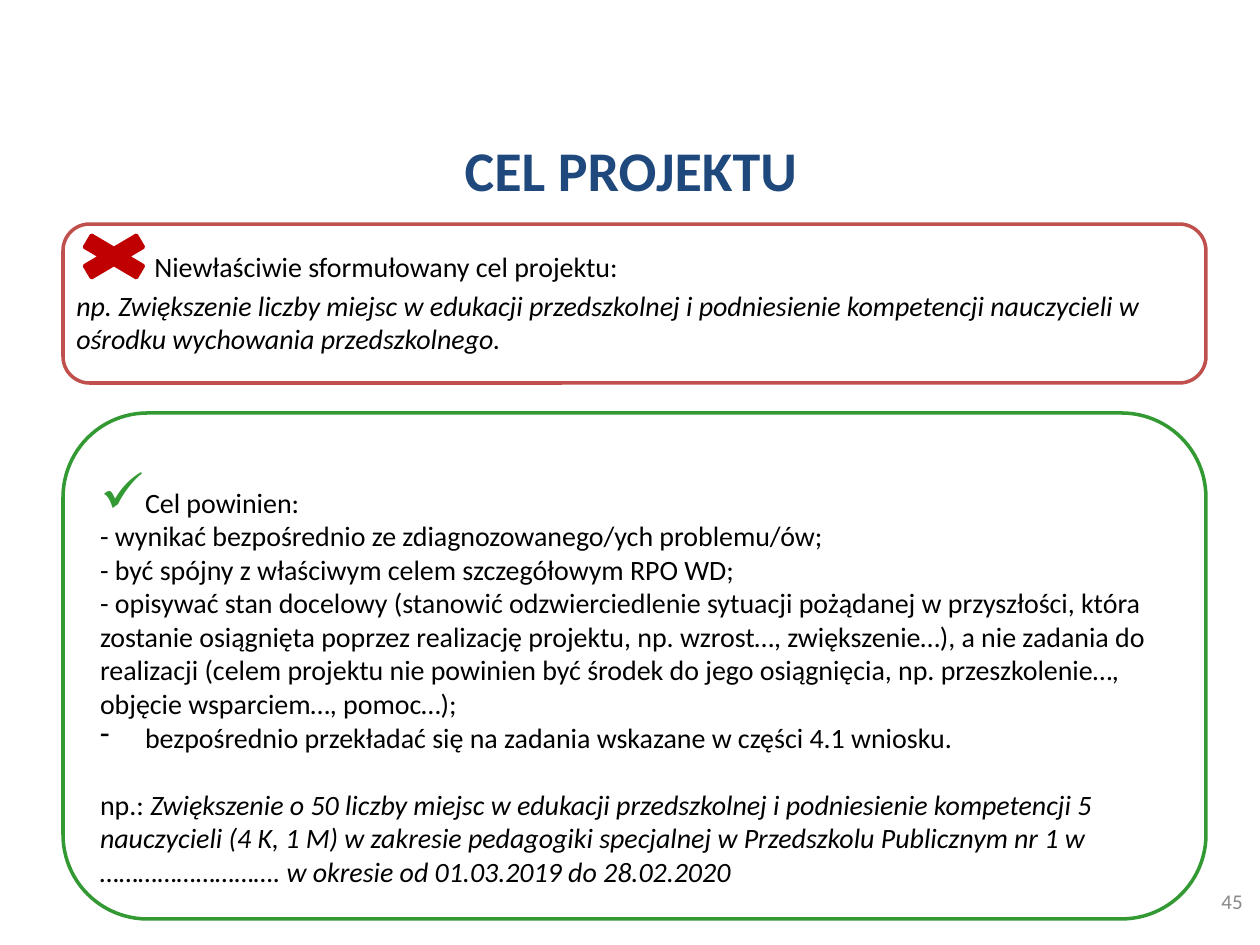
from lxml import etree
from pptx import Presentation
from pptx.dml.color import RGBColor
from pptx.enum.shapes import MSO_SHAPE
from pptx.enum.text import MSO_ANCHOR, PP_ALIGN
from pptx.oxml.ns import qn
from pptx.util import Pt

ROUND, CROSS = MSO_SHAPE.ROUNDED_RECTANGLE, MSO_SHAPE.MATH_MULTIPLY
TOP, MID, LOW = MSO_ANCHOR.TOP, MSO_ANCHOR.MIDDLE, MSO_ANCHOR.BOTTOM
LEFT, MIDST, RIGHT = PP_ALIGN.LEFT, PP_ALIGN.CENTER, PP_ALIGN.RIGHT
NAVY = RGBColor(0x1F, 0x49, 0x7D)
BLACK = RGBColor(0, 0, 0)
GREY = RGBColor(0x89, 0x89, 0x89)
ROSE = RGBColor(0xC0, 0x50, 0x4D)
RED = RGBColor(0xC0, 0, 0)
GREEN = RGBColor(0x33, 0x99, 0x33)
FONT = "Calibri"
WIDE, HIGH = 1260, 945

AIMS = [
    "- wynikać bezpośrednio ze zdiagnozowanego/ych problemu/ów;",
    "- być spójny z właściwym celem szczegółowym RPO WD;",
    "- opisywać stan docelowy (stanowić odzwierciedlenie sytuacji pożądanej w "
    "przyszłości, która zostanie osiągnięta poprzez realizację projektu, np. "
    "wzrost…, zwiększenie…), a nie zadania do realizacji (celem projektu nie "
    "powinien być środek do jego osiągnięcia, np. przeszkolenie…, objęcie "
    "wsparciem…, pomoc…);",
]
CASE = (
    "Zwiększenie o 50 liczby miejsc w edukacji przedszkolnej i podniesienie "
    "kompetencji 5 nauczycieli (4 K, 1 M) w zakresie pedagogiki specjalnej w "
    "Przedszkolu Publicznym nr 1 w ………………………. w okresie od 01.03.2019 do "
    "28.02.2020"
)
WRONG = (
    "np. Zwiększenie liczby miejsc w edukacji przedszkolnej i podniesienie "
    "kompetencji nauczycieli w ośrodku wychowania przedszkolnego."
)


def px(n):
    return round(n * 914400 / 126)


def add_shape(slide, kind, box, line, fill=None):
    shape = slide.shapes.add_shape(kind, *map(px, box))
    shape.shadow.inherit = False
    if fill is None:
        shape.fill.background()
    else:
        shape.fill.solid()
        shape.fill.fore_color.rgb = fill
    shape.line.color.rgb = line
    shape.line.width = Pt(2)
    return shape


def set_frame(shape, anchor):
    frame = shape.text_frame
    frame.word_wrap = True
    frame.vertical_anchor = anchor
    return frame


def add_box(slide, box, anchor):
    return set_frame(slide.shapes.add_textbox(*map(px, box)), anchor)


def add_run(para, text, size=16, tint=BLACK, bold=False, slant=False):
    run = para.add_run()
    run.text = text
    font = run.font
    font.name, font.size = FONT, Pt(size)
    font.bold, font.italic = bold, slant
    font.color.rgb = tint


def add_para(frame, align=LEFT, gap=0):
    first = frame.paragraphs[0]
    para = frame.add_paragraph() if first.runs else first
    para.alignment = align
    if gap:
        para.space_before = Pt(gap)
    return para


def set_mark(para, char, tint=None, scale=None):
    props = para._p.get_or_add_pPr()
    props.set("marL", str(px(45)))
    props.set("indent", str(-px(45)))
    if tint is not None:
        hue = etree.SubElement(props, qn("a:buClr"))
        etree.SubElement(hue, qn("a:srgbClr")).set("val", str(tint))
    if scale:
        etree.SubElement(props, qn("a:buSzPct")).set("val", str(scale * 1000))
    etree.SubElement(props, qn("a:buChar")).set("char", char)


def add_title(slide, box):
    para = add_para(add_box(slide, box, MID), MIDST)
    add_run(para, "CEL PROJEKTU", 32, NAVY, bold=True)


def add_wrong(slide, box):
    x, y, w, h = box
    add_shape(slide, ROUND, box, ROSE)
    frame = add_box(slide, (x + 1, y + 19, w - 9, h - 22), TOP)
    head = add_para(frame)
    head._p.get_or_add_pPr().set("indent", str(px(78)))
    add_run(head, "Niewłaściwie sformułowany cel projektu:")
    add_run(add_para(frame, gap=3.2), WRONG, slant=True)
    add_shape(slide, CROSS, (x + 1, y + 3, 100, 59), RED, RED)


def add_right(slide, box):
    frame = set_frame(add_shape(slide, ROUND, box, GREEN), LOW)
    head = add_para(frame)
    set_mark(head, "✓", GREEN, 200)
    add_run(head, "Cel powinien:")
    for aim in AIMS:
        add_run(add_para(frame), aim)
    last = add_para(frame)
    set_mark(last, "-")
    add_run(last, "bezpośrednio przekładać się na zadania wskazane w części 4.1 wniosku.")
    case = add_para(frame, gap=19.2)
    add_run(case, "np.: ")
    add_run(case, CASE, slant=True)


def add_count(slide, box):
    add_run(add_para(add_box(slide, box, MID), RIGHT), "45", 12, GREY)


def main():
    deck = Presentation()
    deck.slide_width, deck.slide_height = px(WIDE), px(HIGH)
    slide = deck.slides.add_slide(deck.slide_layouts[6])
    add_title(slide, (64, 135, 1134, 69))
    add_wrong(slide, (63, 224, 1143, 159))
    add_right(slide, (63, 413, 1143, 506))
    add_count(slide, (961, 876, 294, 50))
    deck.save("out.pptx")


if __name__ == "__main__":
    main()
